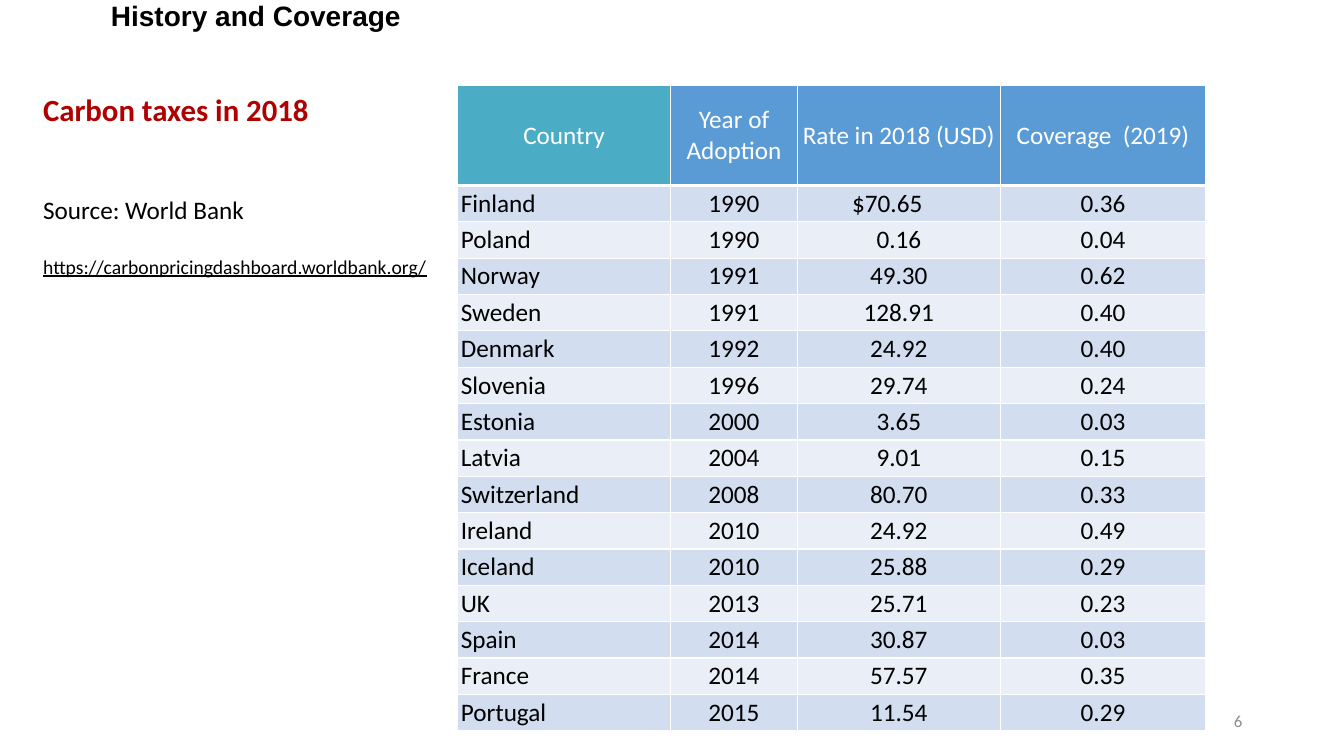
from dataclasses import dataclass

from lxml.etree import SubElement
from pptx import Presentation
from pptx.dml.color import RGBColor as Rgb
from pptx.enum.text import MSO_ANCHOR as Anchor, PP_ALIGN as Align
from pptx.oxml.ns import qn
from pptx.util import Inches, Pt


@dataclass(frozen=True)
class Theme:
    """Fonts, type sizes and colours of the slide."""
    title_font: str = "Arial"
    body_font: str = "Calibri"
    title: int = 20
    heading: int = 22
    body: int = 18
    link: int = 14
    number: int = 12
    black: str = "000000"
    white: str = "FFFFFF"
    red: str = "B00000"
    grey: str = "8C8C8C"
    teal: str = "4BACC6"
    blue: str = "5B9BD5"
    bands: tuple = ("D2DEEF", "EAEFF7")


THEME = Theme()
HEADERS = ("Country", "Year of Adoption", "Rate in 2018 (USD)", "Coverage  (2019)")
TAXES = (
    ("Finland", "1990", "$70.65", "0.36"),
    ("Poland", "1990", "0.16", "0.04"),
    ("Norway", "1991", "49.30", "0.62"),
    ("Sweden", "1991", "128.91", "0.40"),
    ("Denmark", "1992", "24.92", "0.40"),
    ("Slovenia", "1996", "29.74", "0.24"),
    ("Estonia", "2000", "3.65", "0.03"),
    ("Latvia", "2004", "9.01", "0.15"),
    ("Switzerland", "2008", "80.70", "0.33"),
    ("Ireland", "2010", "24.92", "0.49"),
    ("Iceland", "2010", "25.88", "0.29"),
    ("UK", "2013", "25.71", "0.23"),
    ("Spain", "2014", "30.87", "0.03"),
    ("France", "2014", "57.57", "0.35"),
    ("Portugal", "2015", "11.54", "0.29"),
)
COLUMN_WIDTHS = (2.11, 1.26, 2.01, 2.04)
TABLE_HEIGHT, HEADER_HEIGHT = 6.4, 0.99


def style_paragraph(paragraph, text, size, color, font=THEME.body_font,
                    bold=False, underline=False, align=Align.LEFT, before=0):
    """Write the text of a paragraph and set its look."""
    paragraph.text = text
    paragraph.alignment = align
    paragraph.space_before = Pt(before)
    paragraph.font.name = font
    paragraph.font.size = Pt(size)
    paragraph.font.bold = bold
    paragraph.font.underline = underline
    paragraph.font.color.rgb = Rgb.from_string(color)


def add_frame(slide, left, top, width, height, anchor=Anchor.TOP):
    """Add a wrapping text box and return its text frame."""
    box = slide.shapes.add_textbox(*map(Inches, (left, top, width, height)))
    box.text_frame.word_wrap = True
    box.text_frame.vertical_anchor = anchor
    return box.text_frame


def set_borders(cell, **widths):
    """Draw white cell borders with the given widths in points."""
    properties = cell._tc.get_or_add_tcPr()
    for side in "LRTB":
        line = SubElement(properties, qn(f"a:ln{side}"), w=str(Pt(widths.get(side, 1))))
        fill = SubElement(line, qn("a:solidFill"))
        SubElement(fill, qn("a:srgbClr"), val=THEME.white)


def fill_cell(cell, text, fill, color, align, **borders):
    """Write one table cell with its fill and borders."""
    cell.vertical_anchor = Anchor.MIDDLE
    cell.margin_left = cell.margin_right = Inches(0.03)
    cell.margin_top = cell.margin_bottom = 0
    style_paragraph(cell.text_frame.paragraphs[0], text, THEME.body, color, align=align)
    set_borders(cell, **borders)
    cell.fill.solid()
    cell.fill.fore_color.rgb = Rgb.from_string(fill)


def add_tax_table(slide):
    """Add the table of carbon taxes by country."""
    table = slide.shapes.add_table(
        len(TAXES) + 1, len(HEADERS), Inches(4.54), Inches(0.85),
        Inches(sum(COLUMN_WIDTHS)), Inches(TABLE_HEIGHT)).table
    table.first_row = table.horz_banding = False
    for column, width in zip(table.columns, COLUMN_WIDTHS):
        column.width = Inches(width)
    for row in table.rows:
        row.height = Inches((TABLE_HEIGHT - HEADER_HEIGHT) / len(TAXES))
    table.rows[0].height = Inches(HEADER_HEIGHT)

    for col, header in enumerate(HEADERS):
        fill = THEME.blue if col else THEME.teal
        fill_cell(table.cell(0, col), header, fill, THEME.white, Align.CENTER, B=3)
    for row, tax in enumerate(TAXES, 1):
        for col, value in enumerate(tax):
            fill_cell(table.cell(row, col), value, THEME.bands[(row - 1) % 2], THEME.black,
                      Align.CENTER if col else Align.LEFT, T=3 if row == 1 else 1)
    table.cell(1, 2).margin_right = Inches(0.26)


def add_source_note(slide):
    """Add the red heading with the data source below it."""
    note = add_frame(slide, 0.33, 0.85, 4.1, 1.99)
    style_paragraph(note.paragraphs[0], "Carbon taxes in 2018", THEME.heading, THEME.red,
                    bold=True)
    style_paragraph(note.add_paragraph(), "Source: World Bank", THEME.body, THEME.black,
                    before=48)
    style_paragraph(note.add_paragraph(), "https://carbonpricingdashboard.worldbank.org/",
                    THEME.link, THEME.black, underline=True, before=21)


def add_title(slide):
    """Add the indented slide title."""
    title = add_frame(slide, 0, -0.1, 13.33, 0.47, Anchor.BOTTOM)
    title.margin_left = Inches(1.1)
    style_paragraph(title.paragraphs[0], "History and Coverage", THEME.title, THEME.black,
                    font=THEME.title_font, bold=True)


def add_slide_number(slide):
    """Add the slide number at the lower right."""
    number = add_frame(slide, 9.42, 6.95, 3, 0.4, Anchor.MIDDLE)
    style_paragraph(number.paragraphs[0], "6", THEME.number, THEME.grey, align=Align.RIGHT)


def main():
    """Build the slide and save it."""
    deck = Presentation()
    deck.slide_width, deck.slide_height = Inches(13.33), Inches(7.5)
    slide = deck.slides.add_slide(deck.slide_layouts[6])
    add_source_note(slide)
    add_tax_table(slide)
    add_slide_number(slide)
    add_title(slide)
    deck.save("out.pptx")


if __name__ == "__main__":
    main()
